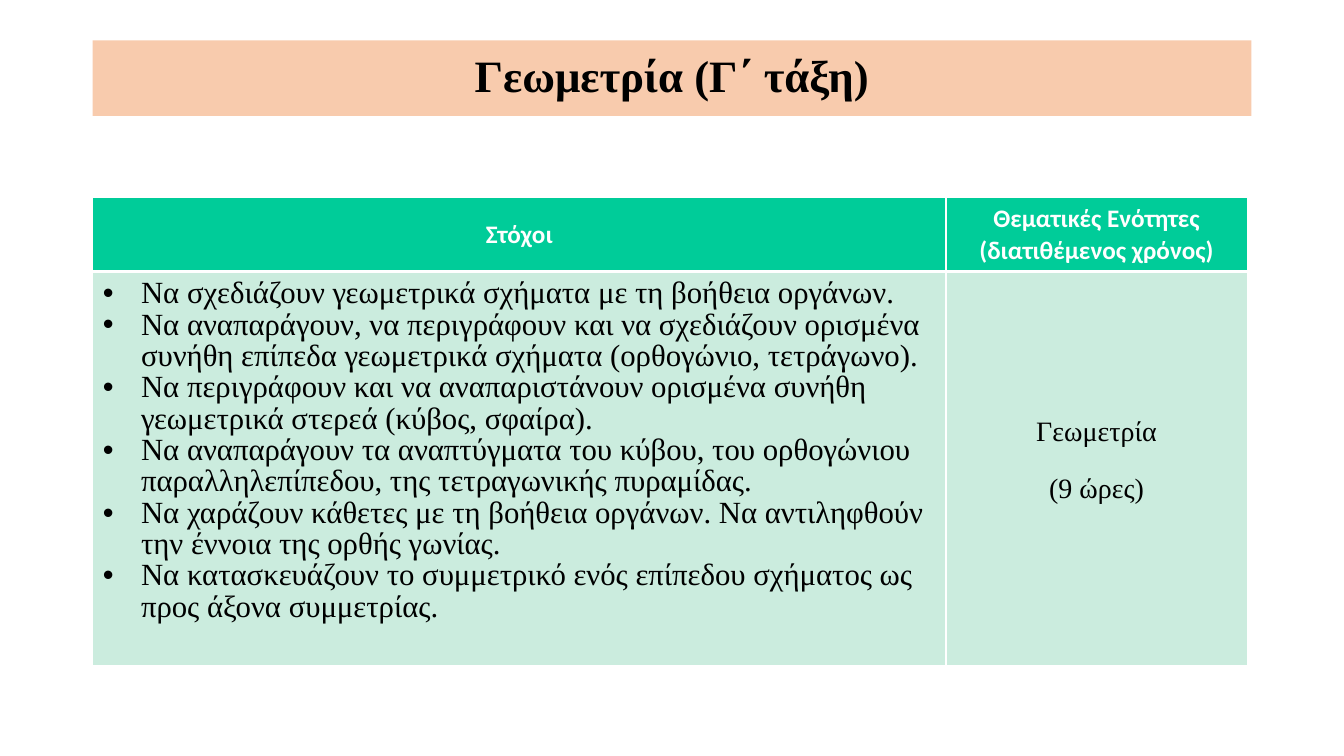
import pptx
import pptx.dml.color
import pptx.enum.text
import pptx.oxml
import pptx.oxml.ns
import pptx.util

RGBColor = pptx.dml.color.RGBColor
PEACH = RGBColor(0xF8, 0xCB, 0xAD)
GREEN = RGBColor(0x00, 0xCC, 0x99)
MINT = RGBColor(0xCB, 0xEC, 0xDE)
WHITE = RGBColor(0xFF, 0xFF, 0xFF)
BLACK = RGBColor(0x00, 0x00, 0x00)

SERIF = "Times New Roman"
SANS = "Calibri"
CENTER = pptx.enum.text.PP_ALIGN.CENTER
LEFT = pptx.enum.text.PP_ALIGN.LEFT
MIDDLE = pptx.enum.text.MSO_ANCHOR.MIDDLE
TOP = pptx.enum.text.MSO_ANCHOR.TOP

THIN, THICK = 0.91, 2.95
EMU_PER_PX = 9144  # 100 px to the inch

GOALS = [
    "Να σχεδιάζουν γεωμετρικά σχήματα με τη βοήθεια οργάνων.",
    "Να αναπαράγουν, να περιγράφουν και να σχεδιάζουν ορισμένα συνήθη επίπεδα "
    "γεωμετρικά σχήματα (ορθογώνιο, τετράγωνο).",
    "Να περιγράφουν και να αναπαριστάνουν ορισμένα συνήθη γεωμετρικά στερεά "
    "(κύβος, σφαίρα).",
    "Να αναπαράγουν τα αναπτύγματα του κύβου, του ορθογώνιου παραλληλεπίπεδου, "
    "της τετραγωνικής πυραμίδας.",
    "Να χαράζουν κάθετες με τη βοήθεια οργάνων. Να αντιληφθούν την έννοια της "
    "ορθής γωνίας.",
    "Να κατασκευάζουν το συμμετρικό ενός επίπεδου σχήματος ως προς άξονα "
    "συμμετρίας.",
]
HEADINGS = [["Στόχοι"], ["Θεματικές Ενότητες", "(διατιθέμενος χρόνος)"]]
UNIT = ["Γεωμετρία", "(9 ώρες)"]


def px(length):
    return pptx.util.Emu(length * EMU_PER_PX)


class SlideBuilder:
    def __init__(self, width, height):
        self.deck = pptx.Presentation()
        self.deck.slide_width, self.deck.slide_height = px(width), px(height)
        self.slide = self.deck.slides.add_slide(self.deck.slide_layouts[5])

    def set_lines(self, frame, lines, font, size, color, bold=False, align=CENTER,
                  spacing=0.92, gap=0, bulleted=False):
        """Fill a text frame with one paragraph per line; gap is in points."""
        frame.text = "\n".join(lines)
        frame.word_wrap = True
        for index, paragraph in enumerate(frame.paragraphs):
            if bulleted:
                self.bullet(paragraph)
            paragraph.alignment = align
            paragraph.line_spacing = spacing
            paragraph.space_before = pptx.util.Pt(gap if index else 0)
            for run in paragraph.runs:
                run.font.name = font
                run.font.size = pptx.util.Pt(size)
                run.font.bold = bold
                run.font.color.rgb = color

    def bullet(self, paragraph, indent=38):
        properties = paragraph._p.get_or_add_pPr()
        properties.set("marL", str(px(indent)))
        properties.set("indent", str(px(-indent)))
        namespace = pptx.oxml.ns.nsdecls("a")
        properties.append(pptx.oxml.parse_xml(f'<a:buFont {namespace} typeface="Arial"/>'))
        properties.append(pptx.oxml.parse_xml(f'<a:buChar {namespace} char="•"/>'))

    def title(self, left, top, width, height, text):
        heading = self.slide.shapes.title
        heading.left, heading.top = px(left), px(top)
        heading.width, heading.height = px(width), px(height)
        heading.fill.solid()
        heading.fill.fore_color.rgb = PEACH
        frame = heading.text_frame
        self.set_lines(frame, [text], SERIF, 32, BLACK, bold=True, spacing=0.9)
        frame.auto_size = pptx.enum.text.MSO_AUTO_SIZE.NONE
        frame.vertical_anchor = MIDDLE

    def table(self, left, top, widths, heights):
        grid = self.slide.shapes.add_table(
            len(heights), len(widths), px(left), px(top),
            px(sum(widths)), px(sum(heights))).table
        for column, width in zip(grid.columns, widths):
            column.width = px(width)
        for row, height in zip(grid.rows, heights):
            row.height = px(height)
        return grid

    def cell(self, cell, lines, fill, anchor, borders, top=5, bottom=5, **style):
        """Style one cell; borders maps the sides L, R, T, B to points."""
        properties = cell._tc.get_or_add_tcPr()
        for side, points in borders.items():
            properties.append(pptx.oxml.parse_xml(
                f'<a:ln{side} {pptx.oxml.ns.nsdecls("a")} w="{pptx.util.Pt(points)}">'
                f'<a:solidFill><a:srgbClr val="{WHITE}"/></a:solidFill></a:ln{side}>'))
        cell.fill.solid()
        cell.fill.fore_color.rgb = fill
        cell.margin_left = cell.margin_right = px(10)
        cell.margin_top, cell.margin_bottom = px(top), px(bottom)
        cell.vertical_anchor = anchor
        self.set_lines(cell.text_frame, lines, **style)


def main():
    builder = SlideBuilder(1334, 750)
    builder.title(92, 40, 1150, 75, "Γεωμετρία (Γ΄ τάξη)")

    curriculum = builder.table(92, 196, [847, 299], [73, 391])
    header_borders = {"L": THIN, "R": THIN, "T": THIN, "B": THICK}
    body_borders = {"L": THIN, "R": THIN, "T": THICK, "B": THIN}
    for column, heading in enumerate(HEADINGS):
        builder.cell(curriculum.cell(0, column), heading, GREEN, MIDDLE,
                     header_borders, font=SANS, size=18, color=WHITE,
                     bold=True, spacing=1.04)
    builder.cell(curriculum.cell(1, 0), GOALS, MINT, TOP, body_borders, top=7,
                 font=SERIF, size=22, color=BLACK, align=LEFT, bulleted=True)
    builder.cell(curriculum.cell(1, 1), UNIT, MINT, MIDDLE, body_borders,
                 bottom=19, font=SERIF, size=20, color=BLACK, gap=20)

    builder.deck.save("out.pptx")


if __name__ == "__main__":
    main()
